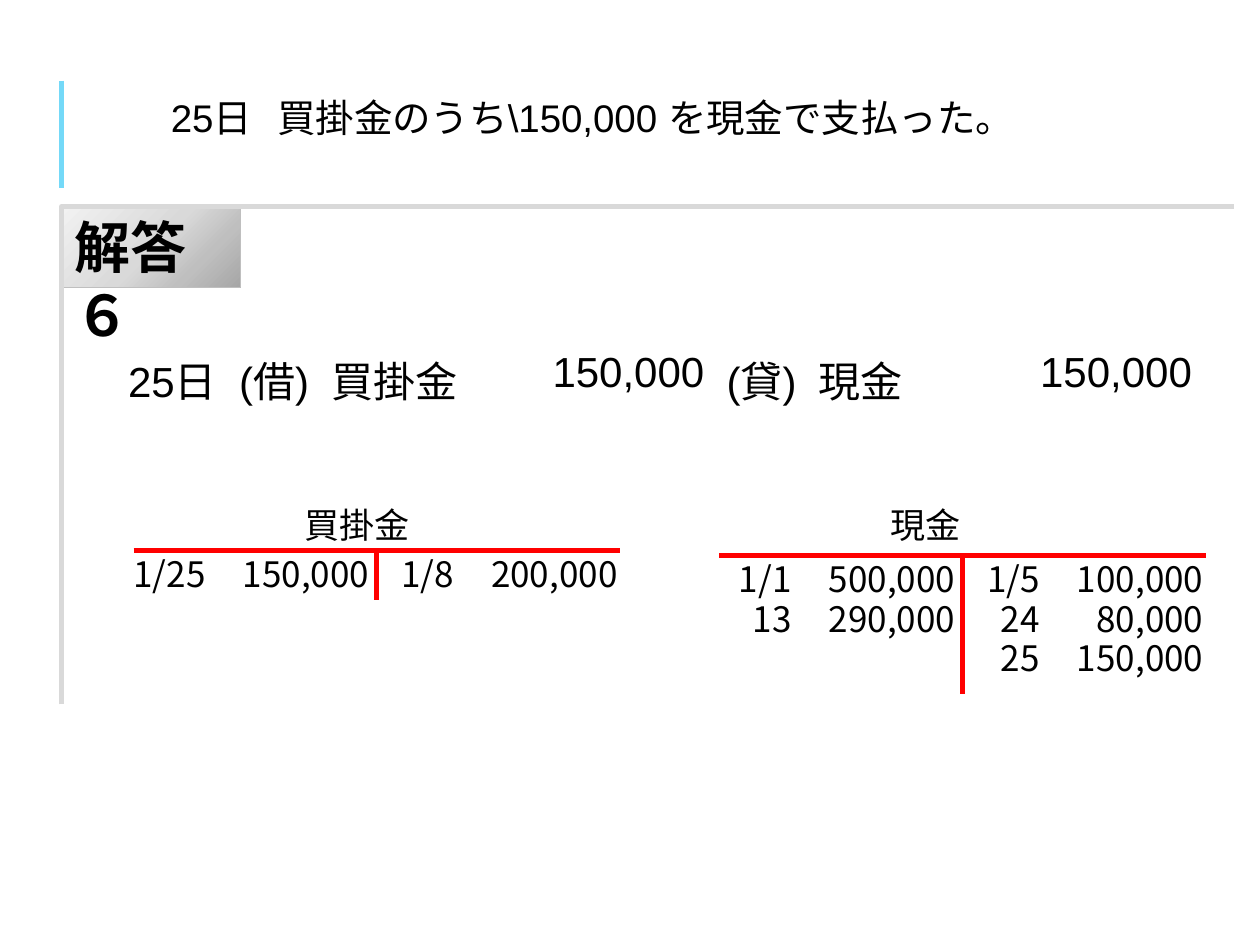
"""Build the ledger slide: a question, its journal entry and two T-accounts."""
from copy import deepcopy

from lxml.etree import SubElement
from pptx import Presentation
from pptx.dml.color import RGBColor
from pptx.enum.shapes import MSO_CONNECTOR
from pptx.enum.text import MSO_ANCHOR, MSO_AUTO_SIZE, PP_ALIGN
from pptx.oxml.ns import qn
from pptx.util import Inches, Pt

BLACK = RGBColor(0, 0, 0)
RED = RGBColor(0xFF, 0, 0)
BLUE = RGBColor(0x74, 0xD9, 0xF8)
GRAY = RGBColor(0xBF, 0xBF, 0xBF)
PALE = RGBColor(0xD9, 0xD9, 0xD9)
SHADES = [(0, RGBColor(0xF2, 0xF2, 0xF2)), (0.51, PALE),
          (0.75, GRAY), (1, RGBColor(0xA6, 0xA6, 0xA6))]
LEFT, MID, RIGHT = PP_ALIGN.LEFT, PP_ALIGN.CENTER, PP_ALIGN.RIGHT
SANS = "Noto Sans CJK JP"

deck = Presentation()
deck.slide_width, deck.slide_height = Inches(10), Inches(7.5)
slide = deck.slides.add_slide(deck.slide_layouts[5])
shapes = slide.shapes
UNIT = deck.slide_width / 100


def grid(*cells):
    """Turn hundredths of the slide's width into lengths."""
    return [round(n * UNIT) for n in cells]


def write(frame, text, size, face, align=LEFT, bold=False):
    """Put one formatted line in a text frame."""
    para = frame.paragraphs[0]
    para.text, para.alignment = text, align
    font = para.font
    font.size, font.name, font.bold = Pt(size), face, bold
    font.color.rgb = BLACK


head = shapes.title
head.left, head.top, head.width, head.height = grid(4.9, 16.4, 14.2, 6.4)
head.fill.gradient()
head.fill.gradient_angle = 315
stops = head._element.find(".//" + qn("a:gsLst"))
for _ in SHADES[2:]:
    stops.append(deepcopy(stops[0]))
for stop, (place, shade) in zip(head.fill.gradient_stops, SHADES):
    stop.position, stop.color.rgb = place, shade
head.line.color.rgb, head.line.width = GRAY, Pt(0.75)
frame = head.text_frame
frame.word_wrap, frame.auto_size = True, MSO_AUTO_SIZE.NONE
frame.vertical_anchor = MSO_ANCHOR.TOP
write(frame, "解答６", 32, "Calibri", bold=True)

start, *rest = [grid(*spot) for spot in ((4.9, 55.9), (4.9, 16.4), (97.9, 16.4))]
path = shapes.build_freeform(*start)
path.add_line_segments(rest, close=False)
edge = path.convert_to_shape()
edge.shadow.inherit = False
edge.fill.background()
edge.line.color.rgb, edge.line.width = PALE, Pt(3)

tables = [
    (4.9, 6.5, 22, None, [(16.1, "25日", RIGHT),
                          (70.5, "買掛金のうち\\150,000 を現金で支払った。", LEFT)]),
    (7.4, 27.7, 24, 0, [(9.8, "25日", RIGHT),
                        (9.1, "(借)", MID), (15, "買掛金", LEFT), (14.6, "150,000", RIGHT),
                        (9.1, "(貸)", MID), (15, "現金", LEFT), (14.6, "150,000", RIGHT)]),
]
for x, y, size, inset, cells in tables:
    span = sum(wide for wide, _, _ in cells)
    table = shapes.add_table(1, len(cells), *grid(x, y, span, 4.1)).table
    table.first_row = table.horz_banding = False
    for col, (wide, text, align) in enumerate(cells):
        table.columns[col].width, = grid(wide)
        cell = table.cell(0, col)
        cell.fill.background()
        if inset is not None:
            cell.margin_left = cell.margin_right = inset
            cell.margin_top = cell.margin_bottom = inset
        write(cell.text_frame, text, size, "Arial", align)
        props = cell._tc.get_or_add_tcPr()
        for at, side in enumerate(("a:lnL", "a:lnR", "a:lnT", "a:lnB")):
            line = SubElement(props, qn(side), w="0")
            SubElement(line, qn("a:noFill"))
            props.insert(at, line)

lines = [(4.9, 6.4, 4.9, 14.9, BLUE)]
ledgers = [
    (9.4, 43.7, 3.9, "買掛金", [("1/25", "150,000", "1/8", "200,000")]),
    (55.9, 44.1, 11, "現金", [("1/1", "500,000", "1/5", "100,000"),
                            ("13", "290,000", "24", "80,000"),
                            ("", "", "25", "150,000")]),
]
slots = [(0, 7.9), (7.5, 13.4), (19.7, 7.9), (27.2, 13.4)]
for x, y, deep, name, rows in ledgers:
    lines += [(x + 1.2, y, x + 39.8, y, RED),
              (x + 20.5, y, x + 20.5, y + deep, RED)]
    items = [(x + 13.8, 39.4, 14.2, name, LEFT)]
    for row, texts in enumerate(rows):
        items += [(x + step, y - 0.4 + row * 3.15, wide, text, RIGHT)
                  for (step, wide), text in zip(slots, texts) if text]
    for left, top, wide, text, align in items:
        frame = shapes.add_textbox(*grid(left, top, wide, 4.4)).text_frame
        frame.word_wrap, frame.vertical_anchor = True, MSO_ANCHOR.MIDDLE
        write(frame, text, 20, SANS, align)

for *ends, color in lines:
    line = shapes.add_connector(MSO_CONNECTOR.STRAIGHT, *grid(*ends))
    line.line.color.rgb, line.line.width = color, Pt(3)
    SubElement(line._element.spPr, qn("a:effectLst"))

deck.save("out.pptx")
